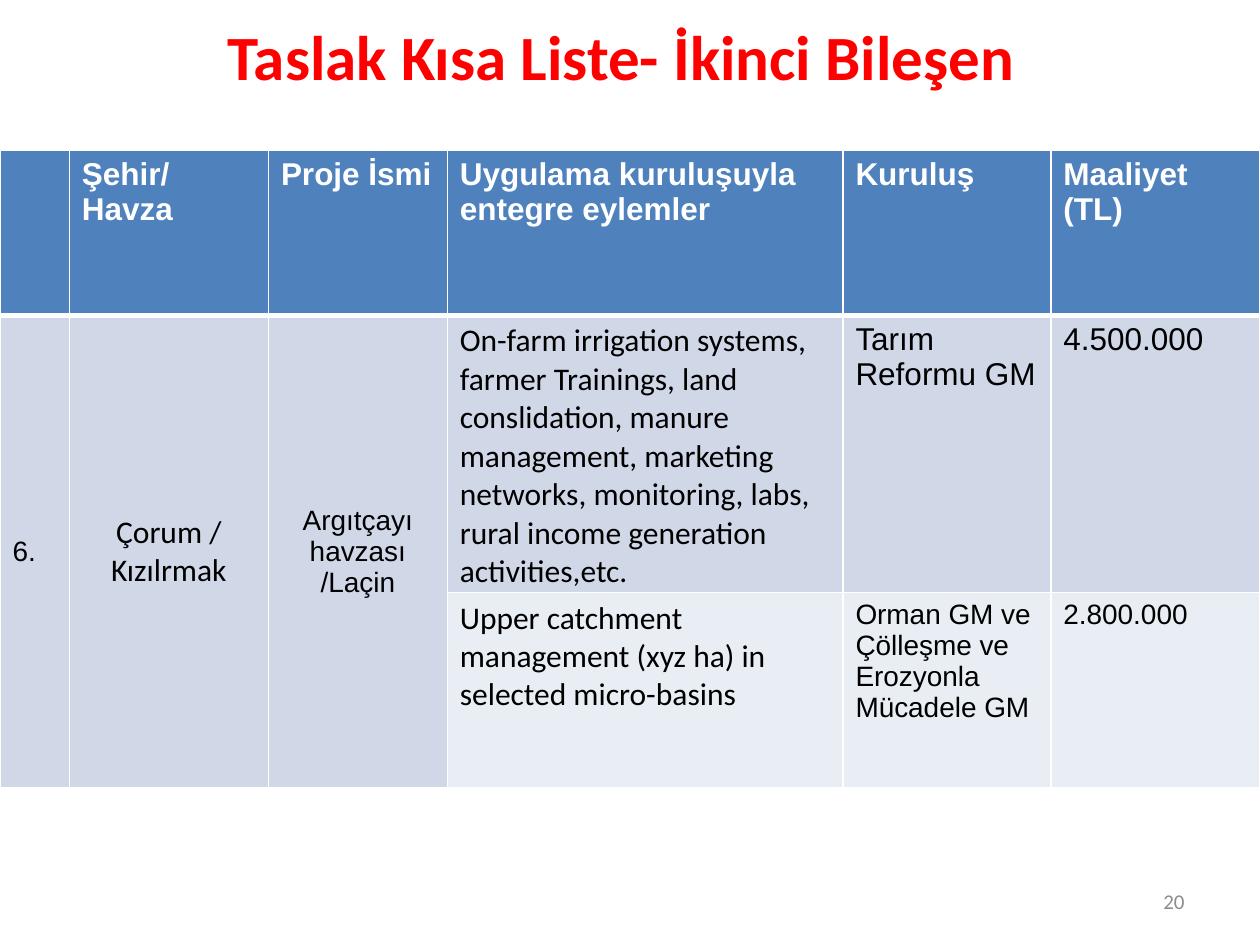
from lxml import etree
from pptx import Presentation
from pptx import util as u
from pptx.dml import color
from pptx.enum import text
from pptx.oxml import ns

WHITE, BLACK, RED, GRAY = "FFFFFF", "000000", "FF0000", "8C8C8C"
BLUE, PALE, PALER = "4F81BD", "D0D8E8", "E9EDF4"
LEFT, CENTER, RIGHT = text.PP_ALIGN.LEFT, text.PP_ALIGN.CENTER, text.PP_ALIGN.RIGHT
TOP, MIDDLE = text.MSO_ANCHOR.TOP, text.MSO_ANCHOR.MIDDLE

COLUMNS = [39.6, 113.8, 102.2, 226.1, 118.8, 119.5]
ROWS = [94.3, 158.4, 111.6]
HEADINGS = ["", "Şehir/Havza", "Proje İsmi", "Uygulama kuruluşuyla entegre eylemler",
            "Kuruluş", "Maaliyet (TL)"]
BASIN = [("6.", "Arial", 16, LEFT), ("Çorum / Kızılrmak", "Calibri", 18, CENTER),
         ("Argıtçayı havzası /Laçin", "Arial", 16, CENTER)]
ACTIONS = [
    [("On-farm irrigation systems, farmer Trainings, land conslidation, manure management, "
      "marketing networks, monitoring, labs, rural income generation activities,etc.",
      "Calibri", 18), ("Tarım Reformu GM", "Arial", 18), ("4.500.000", "Arial", 18)],
    [("Upper catchment management (xyz ha) in selected micro-basins", "Calibri", 18),
     ("Orman GM ve Çölleşme ve Erozyonla Mücadele GM", "Arial", 16),
     ("2.800.000", "Arial", 16)],
]


def rgb(value):
    """Turn a hex string into a colour."""
    return color.RGBColor.from_string(value)


def write(para, words, ink, align=LEFT, **formats):
    """Put one formatted run in a paragraph."""
    para.alignment = align
    span = para.add_run()
    span.text = words
    for name, value in formats.items():
        setattr(span.font, name, value)
    span.font.color.rgb = rgb(ink)


def add_label(page, box, words, ink, align, **formats):
    """Add a vertically centred text box."""
    frame = page.shapes.add_textbox(*map(u.Pt, box)).text_frame
    frame.word_wrap = True
    frame.vertical_anchor = MIDDLE
    write(frame.paragraphs[0], words, ink, align, **formats)


def add_border(cell, side, width):
    """Draw one white cell border."""
    line = etree.SubElement(cell._tc.get_or_add_tcPr(), ns.qn("a:ln" + side),
                            w=str(u.Pt(width)))
    fill = etree.SubElement(line, ns.qn("a:solidFill"))
    etree.SubElement(fill, ns.qn("a:srgbClr"), val=WHITE)


def style_cell(cell, row, fill):
    """Give a cell its borders and fill, with a thick rule under the header."""
    widths = {"L": 1, "R": 1, "T": 3 if row == 1 else 1, "B": 3 if row == 0 else 1}
    for side, width in widths.items():
        add_border(cell, side, width)
    cell.fill.solid()
    cell.fill.fore_color.rgb = rgb(fill)


def fill_cell(cell, words, font, size, align=LEFT, ink=BLACK, bold=False, anchor=TOP):
    """Write the text of a cell."""
    cell.vertical_anchor = anchor
    if words:
        write(cell.text_frame.paragraphs[0], words, ink, align,
              name=font, size=u.Pt(size), bold=bold)


def add_projects(page, left, top):
    """Add the project table at a corner."""
    grid = page.shapes.add_table(len(ROWS), len(COLUMNS), u.Pt(left), u.Pt(top),
                                 u.Pt(sum(COLUMNS)), u.Pt(sum(ROWS))).table
    for column, width in zip(grid.columns, COLUMNS):
        column.width = u.Pt(width)
    for index, height in enumerate(ROWS):
        grid.rows[index].height = u.Pt(height)
        for column in range(len(COLUMNS)):
            body = PALER if index == 2 and column >= len(BASIN) else PALE
            style_cell(grid.cell(index, column), index, body if index else BLUE)
    for column, heading in enumerate(HEADINGS):
        fill_cell(grid.cell(0, column), heading, "Arial", 18, ink=WHITE, bold=True)
    for column, entry in enumerate(BASIN):
        grid.cell(1, column).merge(grid.cell(2, column))
        fill_cell(grid.cell(1, column), *entry, anchor=MIDDLE)
    for row, entries in enumerate(ACTIONS, 1):
        for column, entry in enumerate(entries, len(BASIN)):
            fill_cell(grid.cell(row, column), *entry)


def main():
    """Build and save the deck."""
    deck = Presentation()
    deck.slide_width, deck.slide_height = u.Pt(720), u.Pt(540)
    page = deck.slides.add_slide(deck.slide_layouts[6])
    add_label(page, (31, -13.7, 648, 90), "Taslak Kısa Liste- İkinci Bileşen", RED, CENTER,
              name="Calibri", size=u.Pt(36), bold=True)
    add_label(page, (516, 500.5, 168, 28.8), "20", GRAY, RIGHT, name="Calibri", size=u.Pt(12))
    add_projects(page, 0, 86)
    deck.save("out.pptx")


if __name__ == "__main__":
    main()
